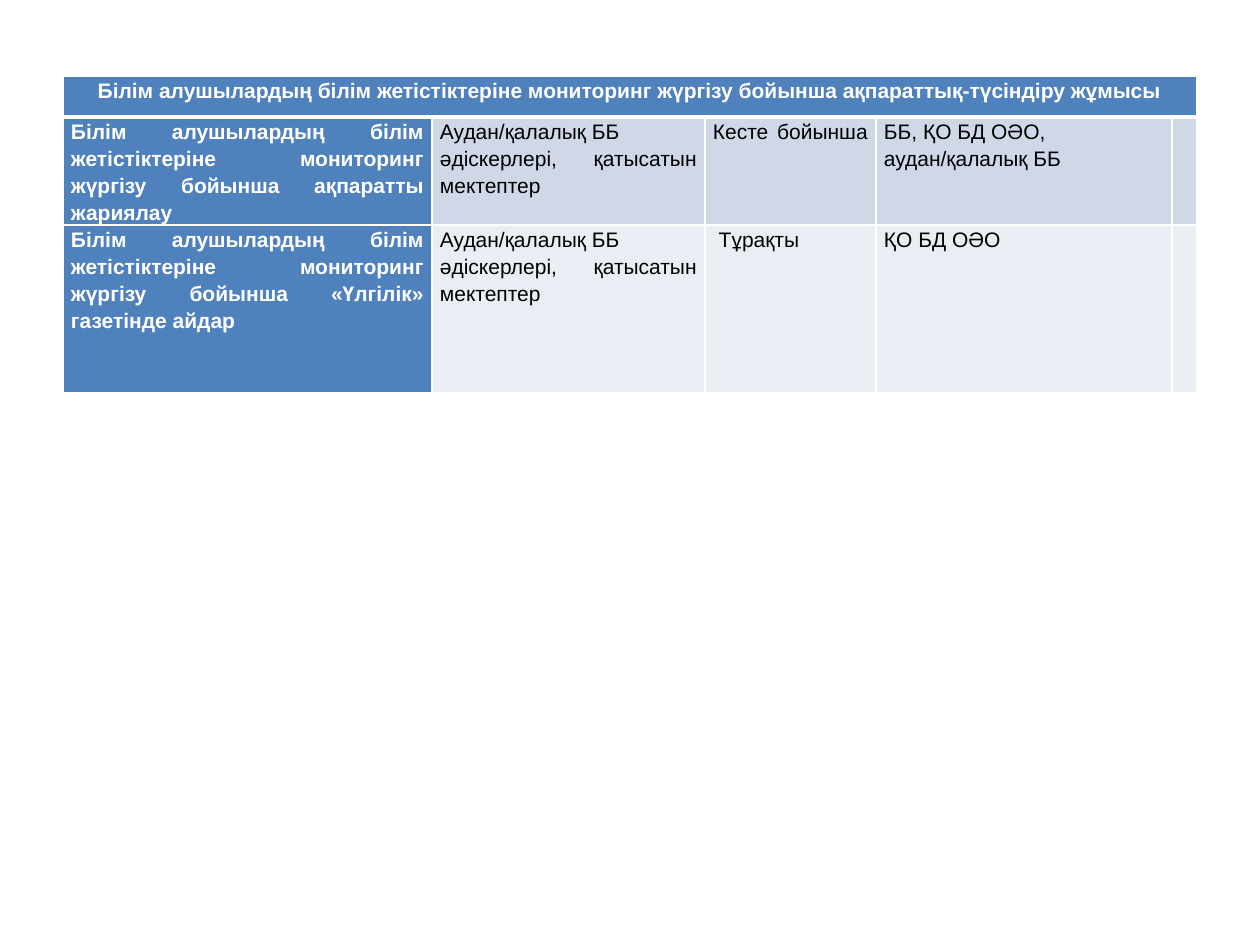
from lxml import etree
from pptx import Presentation
from pptx.dml.color import RGBColor
from pptx.enum.text import PP_ALIGN
from pptx.oxml.ns import qn
from pptx.util import Pt

CENTER, JUSTIFY = PP_ALIGN.CENTER, PP_ALIGN.JUSTIFY

WHITE = RGBColor(0xFF, 0xFF, 0xFF)
BLACK = RGBColor(0x00, 0x00, 0x00)
HEADING_BLUE = RGBColor(0x4F, 0x81, 0xBD)
BAND_DARK = RGBColor(0xD0, 0xD8, 0xE8)
BAND_LIGHT = RGBColor(0xE9, 0xED, 0xF4)

EMU_PER_PX = 914400 / 126
COLUMN_WIDTHS = [369, 273, 171, 296, 25]
ROW_HEIGHTS = [41, 108, 168]
CELL_INSET = 8

HEADING = ("Білім алушылардың білім жетістіктеріне мониторинг жүргізу бойынша "
           "ақпараттық-түсіндіру жұмысы")
ACTIVITIES = [
    (BAND_DARK, [
        ["Білім алушылардың білім жетістіктеріне мониторинг жүргізу бойынша "
         "ақпаратты жариялау "],
        ["Аудан/қалалық ББ", "әдіскерлері, қатысатын мектептер"],
        ["Кесте бойынша "],
        ["ББ, ҚО БД ОӘО, ", "аудан/қалалық ББ"],
        [],
    ]),
    (BAND_LIGHT, [
        ["Білім алушылардың білім жетістіктеріне мониторинг жүргізу бойынша "
         "«Үлгілік» газетінде айдар"],
        ["Аудан/қалалық ББ", "әдіскерлері, қатысатын мектептер "],
        [" Тұрақты "],
        ["ҚО БД ОӘО"],
        [],
    ]),
]


def px(length):
    return round(length * EMU_PER_PX)


def set_borders(cell, bottom_width):
    """Draw white borders; they must precede the fill in the cell properties."""
    properties = cell._tc.get_or_add_tcPr()
    widths = {"a:lnL": 1, "a:lnR": 1, "a:lnT": 1, "a:lnB": bottom_width}
    for position, (tag, width) in enumerate(widths.items()):
        line = etree.Element(qn(tag), w=str(Pt(width)))
        fill = etree.SubElement(line, qn("a:solidFill"))
        etree.SubElement(fill, qn("a:srgbClr"), val=str(WHITE))
        properties.insert(position, line)


def format_cell(cell, paragraphs, fill, heading=False, align=JUSTIFY, bottom_width=1):
    cell.fill.solid()
    cell.fill.fore_color.rgb = fill
    set_borders(cell, bottom_width)
    cell.margin_left = cell.margin_right = px(CELL_INSET)
    cell.margin_top = cell.margin_bottom = 0
    frame = cell.text_frame
    for index, text in enumerate(paragraphs):
        paragraph = frame.add_paragraph() if index else frame.paragraphs[0]
        paragraph.alignment = align
        paragraph.line_spacing = 1.15
        run = paragraph.add_run()
        run.text = text
        run.font.name = "Arial"
        run.font.size = Pt(12)
        run.font.bold = heading
        run.font.color.rgb = WHITE if heading else BLACK


def add_activity_table(slide, left, top):
    table = slide.shapes.add_table(
        len(ROW_HEIGHTS), len(COLUMN_WIDTHS), px(left), px(top),
        px(sum(COLUMN_WIDTHS)), px(sum(ROW_HEIGHTS))).table
    for column, width in zip(table.columns, COLUMN_WIDTHS):
        column.width = px(width)
    for row, height in zip(table.rows, ROW_HEIGHTS):
        row.height = px(height)

    for column in range(len(COLUMN_WIDTHS)):
        format_cell(table.cell(0, column), [] if column else [HEADING],
                    HEADING_BLUE, True, CENTER, bottom_width=3)
    table.cell(0, 0).merge(table.cell(0, len(COLUMN_WIDTHS) - 1))

    for row, (band, entries) in enumerate(ACTIVITIES, start=1):
        for column, paragraphs in enumerate(entries):
            is_activity = column == 0
            format_cell(table.cell(row, column), paragraphs,
                        HEADING_BLUE if is_activity else band, is_activity)


def main():
    presentation = Presentation()
    presentation.slide_width = px(1260)
    presentation.slide_height = px(945)
    slide = presentation.slides.add_slide(presentation.slide_layouts[6])
    add_activity_table(slide, left=63, top=76)
    presentation.save("out.pptx")


if __name__ == "__main__":
    main()
